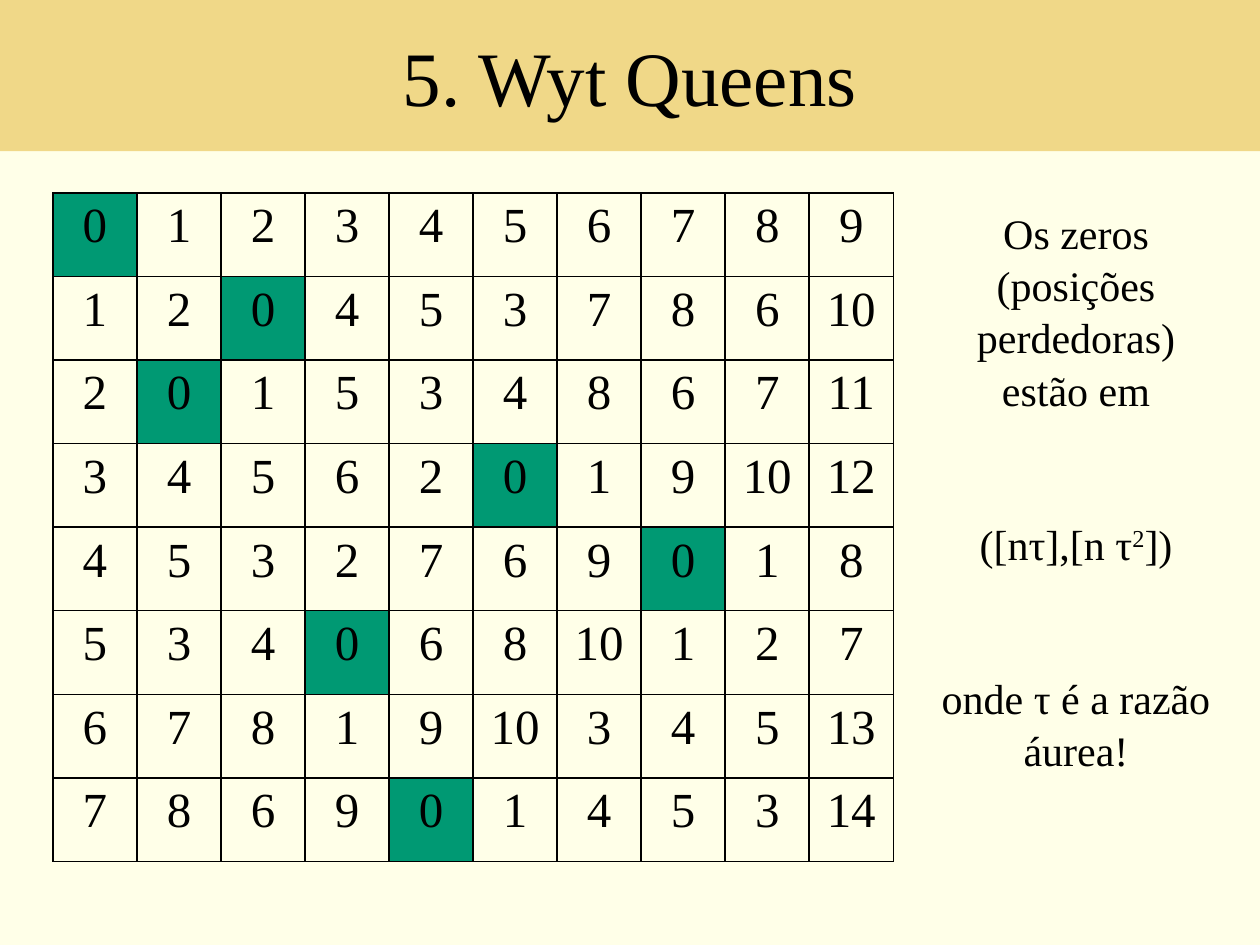
from lxml.etree import SubElement
from pptx import Presentation
from pptx.dml.color import RGBColor
from pptx.enum.text import MSO_ANCHOR, PP_ALIGN
from pptx.oxml.ns import qn
from pptx.util import Inches, Pt

COLORS = {
    "background": "FFFFE8",
    "banner": "F0D888",
    "zero": "009973",
    "text": "000000",
    "border": "000000",
}
FONT = "Times New Roman"
GRID = [
    [0, 1, 2, 3, 4, 5, 6, 7, 8, 9],
    [1, 2, 0, 4, 5, 3, 7, 8, 6, 10],
    [2, 0, 1, 5, 3, 4, 8, 6, 7, 11],
    [3, 4, 5, 6, 2, 0, 1, 9, 10, 12],
    [4, 5, 3, 2, 7, 6, 9, 0, 1, 8],
    [5, 3, 4, 0, 6, 8, 10, 1, 2, 7],
    [6, 7, 8, 1, 9, 10, 3, 4, 5, 13],
    [7, 8, 6, 9, 0, 1, 4, 5, 3, 14],
]
NOTES = [
    [("Os zeros (posições perdedoras) estão em", False)],
    [("([nτ],[n τ", False), ("2", True), ("])", False)],
    [("onde τ é a razão áurea!", False)],
]


def paint(fill, color):
    fill.solid()
    fill.fore_color.rgb = RGBColor.from_string(COLORS[color])


def add_span(para, text, size, raised=False):
    para.alignment = PP_ALIGN.CENTER
    span = para.add_run()
    span.text = text
    for name, value in {"name": FONT, "size": Pt(size), "bold": False}.items():
        setattr(span.font, name, value)
    span.font.color.rgb = RGBColor.from_string(COLORS["text"])
    if raised:
        span.font._element.set("baseline", "30000")


def add_title(slide, text):
    title = slide.shapes.title
    frame = {"left": 0, "top": 0, "width": Inches(10), "height": Inches(1.2)}
    for name, value in frame.items():
        setattr(title, name, value)
    paint(title.fill, "banner")
    title.text_frame.vertical_anchor = MSO_ANCHOR.MIDDLE
    add_span(title.text_frame.paragraphs[0], text, 44)


def add_borders(cell):
    properties = cell._tc.get_or_add_tcPr()
    for position, side in enumerate(("lnL", "lnR", "lnT", "lnB")):
        line = SubElement(properties, qn(f"a:{side}"), w=str(Pt(1)))
        fill = SubElement(line, qn("a:solidFill"))
        SubElement(fill, qn("a:srgbClr"), val=COLORS["border"])
        properties.insert(position, line)


def add_grid(slide, values):
    table = slide.shapes.add_table(
        len(values), len(values[0]),
        Inches(0.42), Inches(1.53), Inches(6.67), Inches(5.31),
    ).table
    table.first_row = False
    table.horz_banding = False
    for row, numbers in enumerate(values):
        for column, number in enumerate(numbers):
            cell = table.cell(row, column)
            add_span(cell.text_frame.paragraphs[0], str(number), 28)
            if number == 0:
                paint(cell.fill, "zero")
            else:
                cell.fill.background()
            add_borders(cell)


def add_notes(slide, notes):
    box = slide.shapes.add_textbox(
        Inches(7.33), Inches(1.58), Inches(2.42), Inches(4.54)
    )
    frame = box.text_frame
    frame.word_wrap = True
    for index, spans in enumerate(notes):
        para = frame.add_paragraph() if index else frame.paragraphs[0]
        para.line_spacing = 1.04
        if index:
            para.space_before = Pt(58)
        for text, raised in spans:
            add_span(para, text, 24, raised)


def main():
    deck = Presentation()
    deck.slide_width = Inches(10)
    deck.slide_height = Inches(7.5)
    slide = deck.slides.add_slide(deck.slide_layouts[5])
    paint(slide.background.fill, "background")
    add_title(slide, "5. Wyt Queens")
    add_grid(slide, GRID)
    add_notes(slide, NOTES)
    deck.save("out.pptx")


if __name__ == "__main__":
    main()
